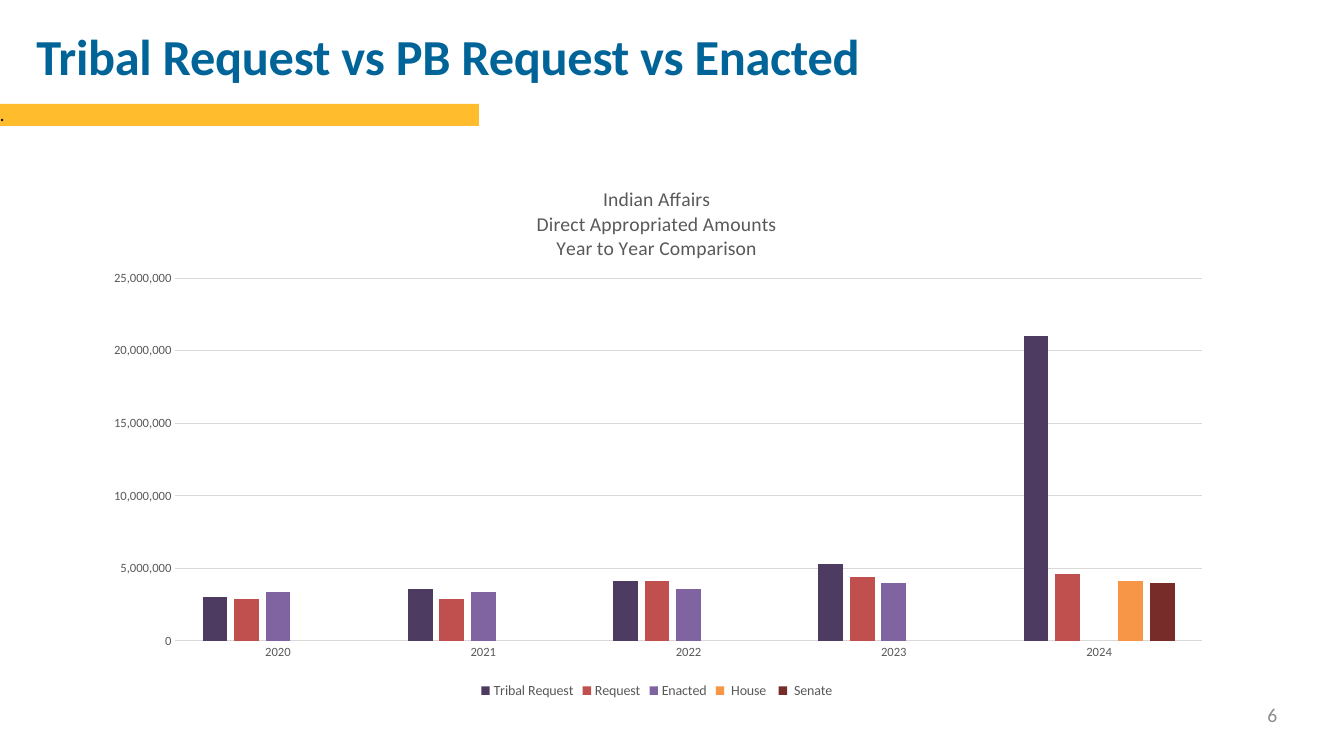
from lxml import etree
from pptx import Presentation
from pptx import util as u
from pptx.chart.data import CategoryChartData
from pptx.dml.color import RGBColor
from pptx.enum import chart as ch, shapes, text
from pptx.oxml import ns

FONT = "Calibri"
COLORS = {
    "heading": "006499", "band": "FFBD2D", "ink": "000000",
    "page": "8C8C8C", "label": "595959", "grid": "D9D9D9",
    "Tribal Request": "4D3B62", "Request": "C0504D", "Enacted": "8064A2",
    " House ": "F79646", " Senate ": "772C2A",
}
YEARS = ["2020", "2021", "2022", "2023", "2024"]
AMOUNTS = {
    "Tribal Request": [3000000, 3600000, 4100000, 5300000, 21000000],
    "Request": [2900000, 2900000, 4100000, 4400000, 4600000],
    "Enacted": [3400000, 3400000, 3600000, 4000000, None],
    " House ": [None, None, None, None, 4100000],
    " Senate ": [None, None, None, None, 4000000],
}
CHART_TITLE = ["Indian Affairs", "Direct Appropriated Amounts", "Year to Year Comparison"]
CHART_WIDTH, CHART_HEIGHT = 11.24, 5.37


def color(name):
    return RGBColor.from_string(COLORS[name])


def style(font, size, name, bold=False):
    font.name, font.size, font.bold = FONT, u.Pt(size), bold
    font.color.rgb = color(name)


def write(holder, words, size, name, bold=False, align=text.PP_ALIGN.LEFT,
          anchor=text.MSO_ANCHOR.TOP):
    frame = holder.text_frame
    frame.margin_left = frame.margin_right = frame.margin_top = frame.margin_bottom = 0
    frame.word_wrap = True
    frame.auto_size = text.MSO_AUTO_SIZE.NONE
    frame.vertical_anchor = anchor
    paragraph = frame.paragraphs[0]
    paragraph.text = words
    paragraph.alignment = align
    style(paragraph.font, size, name, bold)
    return paragraph


def add_heading(slide, words):
    heading = slide.shapes.title
    heading.left, heading.top = u.Inches(0.36), u.Inches(0.25)
    heading.width, heading.height = u.Inches(8.99), u.Inches(0.62)
    line = write(heading, words, 36, "heading", bold=True)
    line.runs[0]._r.get_or_add_rPr().set("spc", "-20")


def add_band(slide):
    band = slide.shapes.add_shape(shapes.MSO_SHAPE.RECTANGLE, 0, u.Inches(1.03),
                                  u.Inches(4.75), u.Inches(0.22))
    band.shadow.inherit = False
    band.fill.solid()
    band.fill.fore_color.rgb = color("band")
    band.line.fill.background()
    write(band, ".", 11, "ink", bold=True, anchor=text.MSO_ANCHOR.MIDDLE)


def add_page_number(slide, number):
    page = slide.shapes.add_textbox(u.Inches(9.6), u.Inches(6.97),
                                    u.Inches(3.07), u.Inches(0.24))
    write(page, number, 14, "page", align=text.PP_ALIGN.RIGHT)


def place(parent, before, **fractions):
    for old in parent.findall(ns.qn("c:layout")):
        parent.remove(old)
    layout = etree.Element(ns.qn("c:layout"))
    manual = etree.SubElement(layout, ns.qn("c:manualLayout"))
    if "w" in fractions:
        etree.SubElement(manual, ns.qn("c:layoutTarget")).set("val", "inner")
    for side in "xy":
        etree.SubElement(manual, ns.qn(f"c:{side}Mode")).set("val", "edge")
    for key, fraction in fractions.items():
        etree.SubElement(manual, ns.qn(f"c:{key}")).set("val", str(fraction))
    parent.find(ns.qn(before)).addprevious(layout)


def title_chart(chart):
    frame = chart.chart_title.text_frame
    for index, words in enumerate(CHART_TITLE):
        line = frame.add_paragraph() if index else frame.paragraphs[0]
        line.text = words
        line.alignment = text.PP_ALIGN.CENTER
        style(line.font, 14, "label")
    chart.chart_title.include_in_layout = False
    place(chart.chart_title._element, "c:overlay", x=0.39, y=0.04)


def format_axes(chart):
    years, amounts = chart.category_axis, chart.value_axis
    for axis in (years, amounts):
        axis.major_tick_mark = axis.minor_tick_mark = ch.XL_TICK_MARK.NONE
        style(axis.tick_labels.font, 9, "label")
    amounts.minimum_scale, amounts.maximum_scale = 0, 25000000
    amounts.major_unit = 5000000
    amounts.tick_labels.number_format = "#,##0"
    amounts.tick_labels.number_format_is_linked = False
    amounts.format.line.fill.background()
    for rule in (years.format.line, amounts.major_gridlines.format.line):
        rule.color.rgb = color("grid")
        rule.width = u.Pt(0.75)


def add_comparison(slide):
    data = CategoryChartData(number_format="#,##0")
    data.categories = YEARS
    for name, values in AMOUNTS.items():
        data.add_series(name, values)
    chart = slide.shapes.add_chart(
        ch.XL_CHART_TYPE.COLUMN_CLUSTERED, u.Inches(0.91), u.Inches(1.6),
        u.Inches(CHART_WIDTH), u.Inches(CHART_HEIGHT), data).chart
    style(chart.font, 10, "ink")
    title_chart(chart)
    format_axes(chart)
    chart.has_legend = True
    chart.legend.position = ch.XL_LEGEND_POSITION.BOTTOM
    chart.legend.include_in_layout = False
    style(chart.legend.font, 10, "label")
    columns = chart.plots[0]
    columns.gap_width, columns.overlap = 219, -27
    columns.vary_by_categories = False
    for series in columns.series:
        series.format.fill.solid()
        series.format.fill.fore_color.rgb = color(series.name)
    plot_area = chart._chartSpace.chart.plotArea
    place(plot_area, "c:barChart", x=0.83 / CHART_WIDTH, y=1.16 / CHART_HEIGHT,
          w=10.18 / CHART_WIDTH, h=3.6 / CHART_HEIGHT)


def main():
    deck = Presentation()
    deck.slide_width, deck.slide_height = u.Inches(13.33), u.Inches(7.5)
    slide = deck.slides.add_slide(deck.slide_layouts[5])
    add_band(slide)
    add_page_number(slide, "6")
    add_heading(slide, "Tribal Request vs PB Request vs Enacted")
    add_comparison(slide)
    deck.save("out.pptx")


if __name__ == "__main__":
    main()
